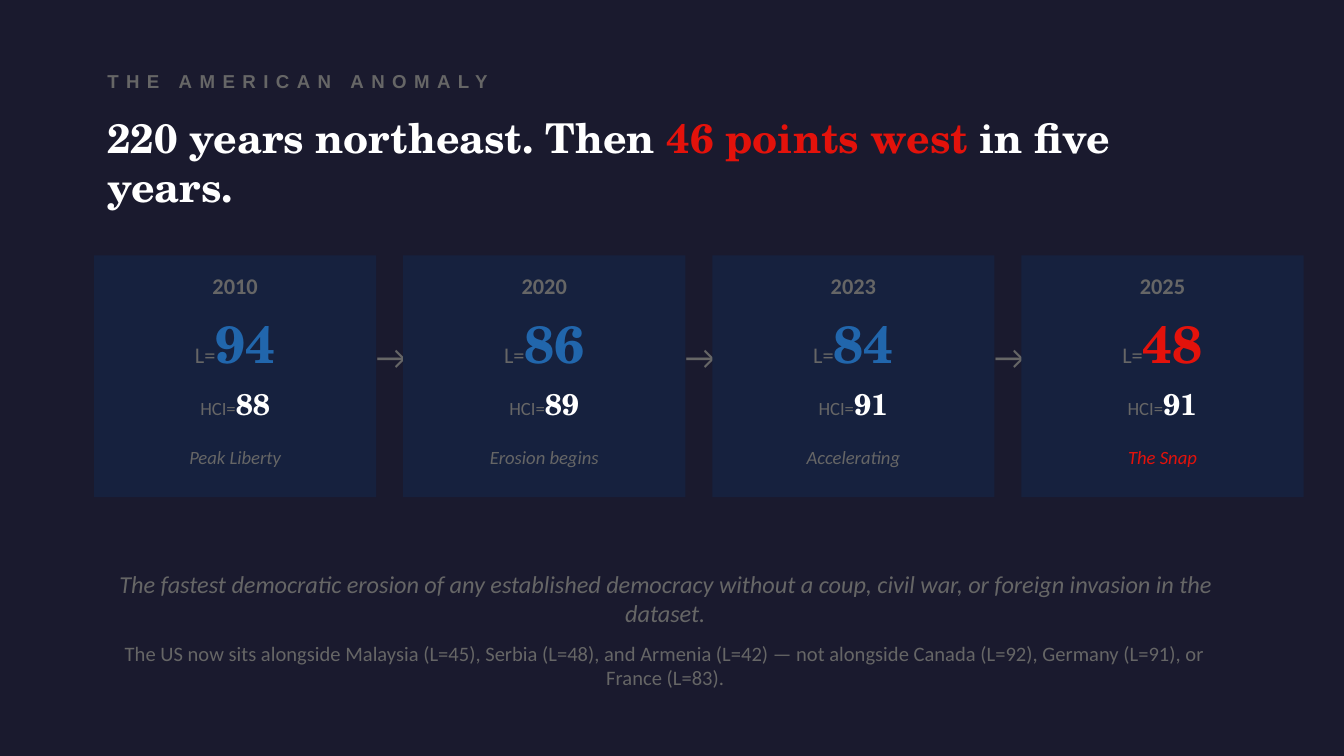
from pptx import Presentation
from pptx.dml.color import RGBColor
from pptx.enum.shapes import MSO_SHAPE
from pptx.enum.text import MSO_ANCHOR, PP_ALIGN
from pptx.util import Inches, Pt

RECT = MSO_SHAPE.RECTANGLE
MIDDLE = MSO_ANCHOR.MIDDLE
LEFT, CENTER = PP_ALIGN.LEFT, PP_ALIGN.CENTER

COLORS = {
    "back": "1A1A2E",
    "card": "16213E",
    "gray": "666666",
    "white": "FFFFFF",
    "blue": "2166AC",
    "red": "E3120B",
}
SANS, SERIF, LABEL = "Calibri", "TeX Gyre Schola", "Arial"

MARGIN, TOP = 0.7, 1.9
CARD_W, CARD_H, STEP = 2.1, 1.8, 2.3

# Year, liberty score, HCI score, caption, score colour, caption colour
CARDS = [
    ("2010", "94", "88", "Peak Liberty", "blue", "gray"),
    ("2020", "86", "89", "Erosion begins", "blue", "gray"),
    ("2023", "84", "91", "Accelerating", "blue", "gray"),
    ("2025", "48", "91", "The Snap", "red", "red"),
]


class Deck:
    def __init__(self, width, height):
        self.prs = Presentation()
        self.prs.slide_width = Inches(width)
        self.prs.slide_height = Inches(height)
        self.slide = self.prs.slides.add_slide(self.prs.slide_layouts[6])
        self.paint(self.slide.background.fill, "back")

    def paint(self, fill, color):
        fill.solid()
        fill.fore_color.rgb = RGBColor.from_string(COLORS[color])

    def panel(self, x, y, w, h, color):
        box = self.slide.shapes.add_shape(
            RECT, Inches(x), Inches(y), Inches(w), Inches(h))
        box.shadow.inherit = False
        self.paint(box.fill, color)
        box.line.fill.background()

    def text(self, x, y, w, h, *runs, align=CENTER):
        """Each run is (text, size, colour, font, style, spacing)."""
        box = self.slide.shapes.add_textbox(
            Inches(x), Inches(y), Inches(w), Inches(h))
        frame = box.text_frame
        frame.word_wrap = True
        frame.vertical_anchor = MIDDLE
        para = frame.paragraphs[0]
        para.alignment = align
        for run in runs:
            self.run(para, *run)

    def run(self, para, words, size, color, face=SANS, style="", gap=0):
        run = para.add_run()
        run.text = words
        font = run.font
        font.name = face
        font.size = Pt(size)
        font.bold = "b" in style
        font.italic = "i" in style
        font.color.rgb = RGBColor.from_string(COLORS[color])
        if gap:
            run._r.get_or_add_rPr().set("spc", str(gap * 100))

    def card(self, x, year, score, hci, note, tint, tone):
        self.panel(x, TOP, CARD_W, CARD_H, "card")
        self.text(x, 1.95, CARD_W, 0.35, (year, 12, "gray", SANS, "b"))
        self.text(x, 2.3, CARD_W, 0.5,
                  ("L=", 12, "gray"), (score, 28, tint, SERIF, "b"))
        self.text(x, 2.8, CARD_W, 0.4,
                  ("HCI=", 10, "gray"), (hci, 16, "white", SERIF, "b"))
        self.text(x, 3.25, CARD_W, 0.3, (note, 10, tone, SANS, "i"))


def main():
    # Widescreen, 16 to 9
    deck = Deck(10, 10 * 9 / 16)

    # Heading
    deck.text(MARGIN, 0.4, 8, 0.4,
              ("THE AMERICAN ANOMALY", 10, "gray", LABEL, "b", 4), align=LEFT)
    deck.text(MARGIN, 0.9, 8.5, 0.6,
              ("220 years northeast. Then ", 22, "white", SERIF, "b"),
              ("46 points west", 22, "red", SERIF, "b"),
              (" in five years.", 22, "white", SERIF, "b"), align=LEFT)

    # Timeline cards, with an arrow after each but the last
    for i, card in enumerate(CARDS):
        x = MARGIN + i * STEP
        deck.card(x, *card)
        if i < len(CARDS) - 1:
            deck.text(x + 2, 2.4, 0.4, 0.5, ("→", 18, "gray"))

    # Closing lines
    deck.text(MARGIN, 4.2, 8.5, 0.5,
              ("The fastest democratic erosion of any established democracy "
               "without a coup, civil war, or foreign invasion in the dataset.",
               13, "gray", SANS, "i"))
    deck.text(MARGIN, 4.7, 8.5, 0.5,
              ("The US now sits alongside Malaysia (L=45), Serbia (L=48), and "
               "Armenia (L=42) — not alongside Canada (L=92), Germany (L=91), "
               "or France (L=83).", 11, "gray"))

    deck.prs.save("out.pptx")


if __name__ == "__main__":
    main()
